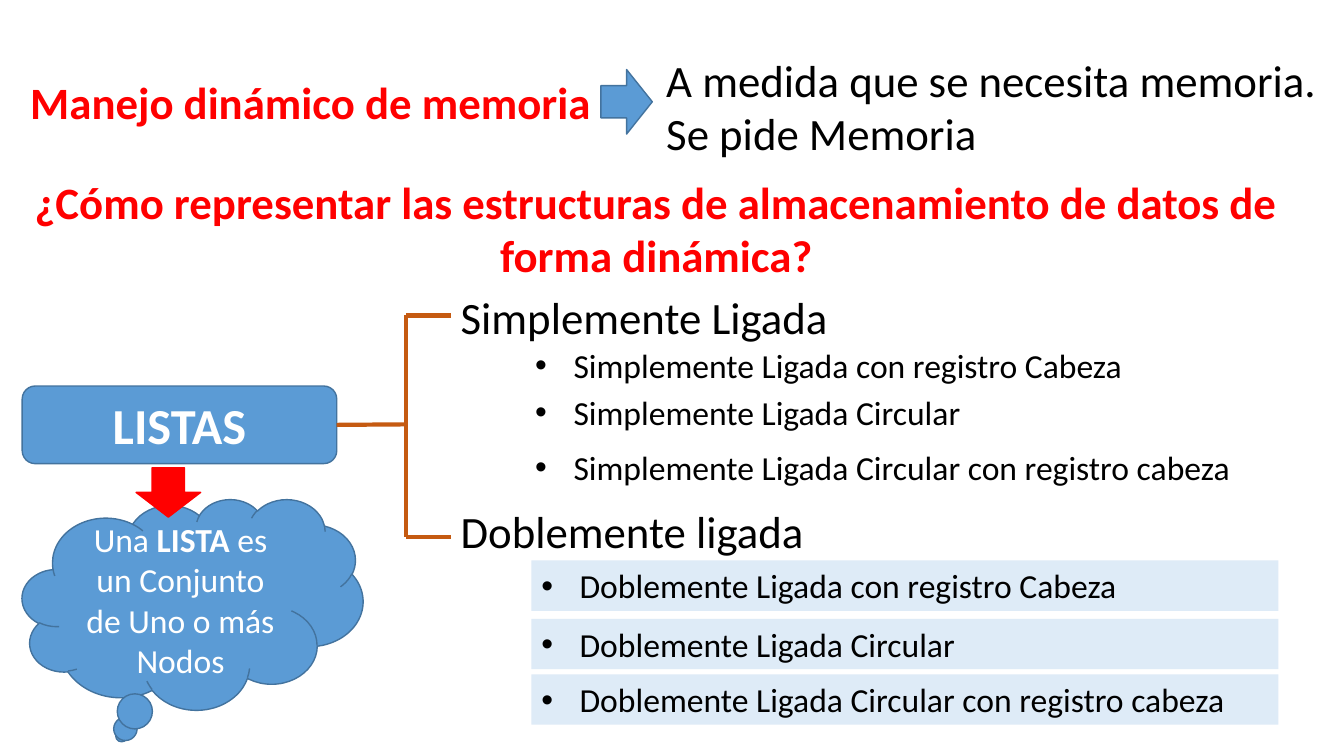
from dataclasses import dataclass

from lxml import etree
from pptx import Presentation
from pptx.dml.color import RGBColor
from pptx.enum.shapes import MSO_CONNECTOR, MSO_SHAPE
from pptx.enum.text import MSO_ANCHOR, MSO_AUTO_SIZE, PP_ALIGN
from pptx.oxml.ns import qn
from pptx.util import Inches, Pt

LEFT, CENTER = PP_ALIGN.LEFT, PP_ALIGN.CENTER
TOP, MIDDLE = MSO_ANCHOR.TOP, MSO_ANCHOR.MIDDLE
STRAIGHT = MSO_CONNECTOR.STRAIGHT
RIGHT_SIDE = 3


@dataclass(frozen=True)
class Theme:
    font: str = "Calibri"
    red: RGBColor = RGBColor(0xFF, 0x00, 0x00)
    black: RGBColor = RGBColor(0x00, 0x00, 0x00)
    white: RGBColor = RGBColor(0xFF, 0xFF, 0xFF)
    blue: RGBColor = RGBColor(0x5B, 0x9B, 0xD5)
    blue_edge: RGBColor = RGBColor(0x43, 0x73, 0x9E)
    pale_blue: RGBColor = RGBColor(0xDE, 0xEB, 0xF7)
    orange: RGBColor = RGBColor(0xC5, 0x5A, 0x11)
    box: float = 36
    heading: float = 32
    body: float = 24


theme = Theme()


def write(shape, paragraphs, size, color, align=LEFT, anchor=TOP, bullet=False):
    frame = shape.text_frame
    frame.word_wrap = True
    frame.auto_size = MSO_AUTO_SIZE.NONE
    frame.vertical_anchor = anchor
    for index, runs in enumerate(paragraphs):
        paragraph = frame.add_paragraph() if index else frame.paragraphs[0]
        paragraph.alignment = align
        if bullet:
            properties = paragraph._p.get_or_add_pPr()
            properties.set("marL", str(Inches(0.38)))
            properties.set("indent", str(-Inches(0.38)))
            etree.SubElement(properties, qn("a:buFont")).set("typeface", "Arial")
            etree.SubElement(properties, qn("a:buChar")).set("char", "•")
        for text, bold in runs:
            run = paragraph.add_run()
            run.text = text
            run.font.name = theme.font
            run.font.size = Pt(size)
            run.font.bold = bold
            run.font.color.rgb = color


def add_filled(kind, left, top, width, height, fill, edge=None):
    shape = slide.shapes.add_shape(
        kind, Inches(left), Inches(top), Inches(width), Inches(height))
    shape.shadow.inherit = False
    shape.fill.solid()
    shape.fill.fore_color.rgb = fill
    if edge is None:
        shape.line.fill.background()
    else:
        shape.line.color.rgb = edge
        shape.line.width = Pt(1)
    return shape


presentation = Presentation()
presentation.slide_width = Inches(13.33)
presentation.slide_height = Inches(7.5)
slide = presentation.slides.add_slide(presentation.slide_layouts[5])

title = slide.shapes.title
title.left, title.top = Inches(0.2), Inches(0.69)
title.width, title.height = Inches(6.26), Inches(0.64)
write(title, [[("Manejo dinámico de memoria", True)]], theme.heading, theme.red)

add_filled(MSO_SHAPE.RIGHT_ARROW, 5.96, 0.69, 0.51, 0.64, theme.blue, theme.blue_edge)

question = slide.shapes.add_textbox(Inches(0.2), Inches(1.68), Inches(12.62), Inches(1.18))
write(question,
      [[("¿Cómo representar las estructuras de almacenamiento de datos de forma dinámica?", True)]],
      theme.heading, theme.red, CENTER)

for left, top, height, lines in [
    (6.51, 0.47, 1.18, ["A medida que se necesita memoria.", "Se pide Memoria"]),
    (4.47, 2.83, 0.64, ["Simplemente Ligada"]),
    (4.47, 4.95, 0.64, ["Doblemente ligada"]),
]:
    heading = slide.shapes.add_textbox(Inches(left), Inches(top), Inches(6.87), Inches(height))
    write(heading, [[(line, False)] for line in lines], theme.heading, theme.black)

variants = ["con registro Cabeza", "Circular", "Circular con registro cabeza"]
for variant, single_top, double_top in zip(variants, (3.37, 3.84, 4.38), (5.56, 6.14, 6.69)):
    single = slide.shapes.add_textbox(
        Inches(5.21), Inches(single_top), Inches(7.41), Inches(0.5))
    double = add_filled(MSO_SHAPE.RECTANGLE, 5.27, double_top, 7.41, 0.5, theme.pale_blue)
    for item, family in ((single, "Simplemente"), (double, "Doblemente")):
        write(item, [[(f"{family} Ligada {variant}", False)]],
              theme.body, theme.black, bullet=True)

lists_box = add_filled(
    MSO_SHAPE.ROUNDED_RECTANGLE, 0.22, 3.83, 3.12, 0.77, theme.blue, theme.blue_edge)
write(lists_box, [[("LISTAS", True)]], theme.box, theme.white, CENTER, MIDDLE)

for start_x, start_y, end_x, end_y in [
    (4.47, 3.13, 4.03, 3.13),
    (4.03, 3.13, 4.03, 5.33),
    (4.47, 5.33, 4.03, 5.33),
    (3.34, 4.21, 4.03, 4.21),
]:
    branch = slide.shapes.add_connector(
        STRAIGHT, Inches(start_x), Inches(start_y), Inches(end_x), Inches(end_y))
    branch.line.color.rgb = theme.orange
    branch.line.width = Pt(3)
    etree.SubElement(branch._element.spPr, qn("a:effectLst"))
    if start_x == 3.34:
        branch.begin_connect(lists_box, RIGHT_SIDE)

cloud = add_filled(
    MSO_SHAPE.CLOUD_CALLOUT, 0.22, 4.95, 3.38, 2.09, theme.blue, theme.blue_edge)
write(cloud,
      [[("Una ", False), ("LISTA", True), (" es un Conjunto de Uno o más Nodos", False)]],
      theme.body, theme.white, CENTER, MIDDLE)

add_filled(MSO_SHAPE.DOWN_ARROW, 1.35, 4.64, 0.64, 0.49, theme.red, theme.red)

presentation.save("out.pptx")
